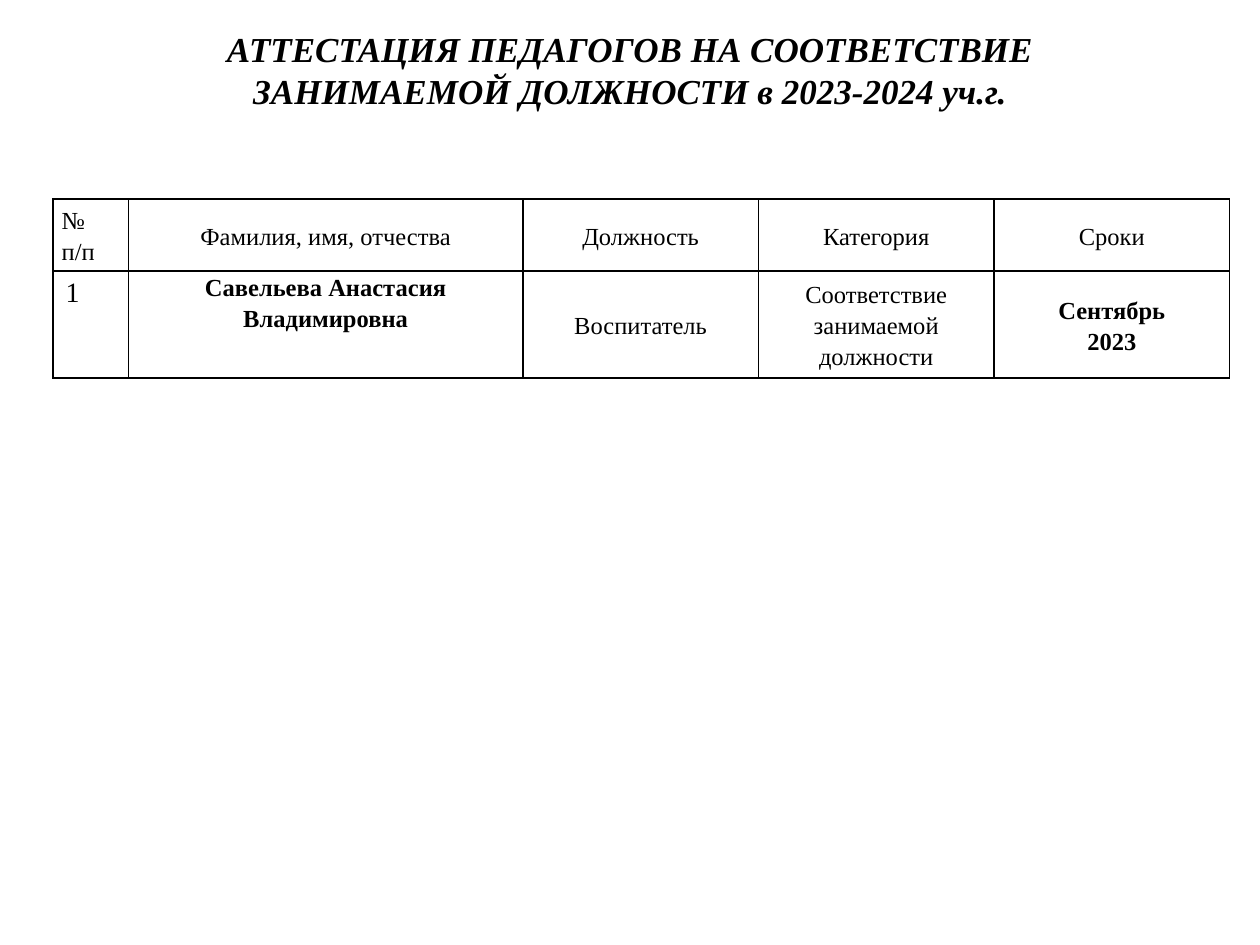
from lxml import etree
from pptx import Presentation
from pptx import util as u
from pptx.dml.color import RGBColor
from pptx.enum import text
from pptx.oxml.ns import qn

COLORS = {"ink": "000000"}
FONT = "Times New Roman"
MIDDLE, TOP = text.MSO_ANCHOR.MIDDLE, text.MSO_ANCHOR.TOP
CENTER, LEFT = text.PP_ALIGN.CENTER, text.PP_ALIGN.LEFT


def write(tf, paragraphs, size=14, bold=False, italic=False, align=CENTER, spacing=1.15):
    for i, paragraph in enumerate(paragraphs):
        p = tf.paragraphs[0] if i == 0 else tf.add_paragraph()
        p.alignment = align
        p.line_spacing = spacing
        for k, line in enumerate(paragraph.split("\n")):
            if k:
                p.add_line_break()
            r = p.add_run()
            r.text = line
            r.font.name = FONT
            r.font.size = u.Pt(size)
            r.font.bold = bold
            r.font.italic = italic
            r.font.color.rgb = RGBColor.from_string(COLORS["ink"])


def add_borders(cell, width=1):
    tc_pr = cell._tc.get_or_add_tcPr()
    for i, side in enumerate(("lnL", "lnR", "lnT", "lnB")):
        ln = etree.Element(qn(f"a:{side}"), w=str(u.Pt(width)))
        fill = etree.SubElement(ln, qn("a:solidFill"))
        etree.SubElement(fill, qn("a:srgbClr"), val=COLORS["ink"])
        tc_pr.insert(i, ln)


prs = Presentation()
prs.slide_width, prs.slide_height = u.Inches(10), u.Inches(7.5)
W = prs.slide_width
s = prs.slides.add_slide(prs.slide_layouts[5])

title = s.shapes.title
title.left, title.top = int(W * 0.05), u.Inches(0.33)
title.width, title.height = int(W * 0.9), u.Inches(0.78)
tf = title.text_frame
tf.auto_size = text.MSO_AUTO_SIZE.NONE
tf.vertical_anchor = MIDDLE
tf.margin_bottom = u.Inches(0.39)
write(tf, ["АТТЕСТАЦИЯ ПЕДАГОГОВ НА СООТВЕТСТВИЕ\nЗАНИМАЕМОЙ ДОЛЖНОСТИ в 2023-2024 уч.г."],
      size=20, bold=True, italic=True, spacing=1.0)

col_widths = [0.6, 3.13] + [1.87] * 3
row_heights = [0.57, 0.85]
rows = [
    [["№ п/п"], ["Фамилия, имя, отчества"], ["Должность"], ["Категория"], ["Сроки"]],
    [["1"], ["Савельева Анастасия Владимировна"], ["Воспитатель"],
     ["Соответствие занимаемой должности"], ["Сентябрь", "2023"]],
]
formats = {
    (0, 0): {"align": LEFT},
    (1, 0): {"align": LEFT, "size": 16, "spacing": 1.0},
    (1, 1): {"bold": True},
    (1, 4): {"bold": True},
}
top_cells = {(1, 0), (1, 1)}

table = s.shapes.add_table(len(rows), len(col_widths), u.Inches(0.42), u.Inches(1.58),
                           u.Inches(sum(col_widths)), u.Inches(sum(row_heights))).table
table.first_row = table.horz_banding = False
for col, width in zip(table.columns, col_widths):
    col.width = u.Inches(width)
for row, height in zip(table.rows, row_heights):
    row.height = u.Inches(height)

for i, row in enumerate(rows):
    for j, paragraphs in enumerate(row):
        cell = table.cell(i, j)
        cell.fill.background()
        cell.vertical_anchor = TOP if (i, j) in top_cells else MIDDLE
        if (i, j) != (1, 0):
            cell.margin_left = cell.margin_right = u.Inches(0.07)
            cell.margin_top = cell.margin_bottom = 0
        write(cell.text_frame, paragraphs, **formats.get((i, j), {}))
        add_borders(cell)

prs.save("out.pptx")
